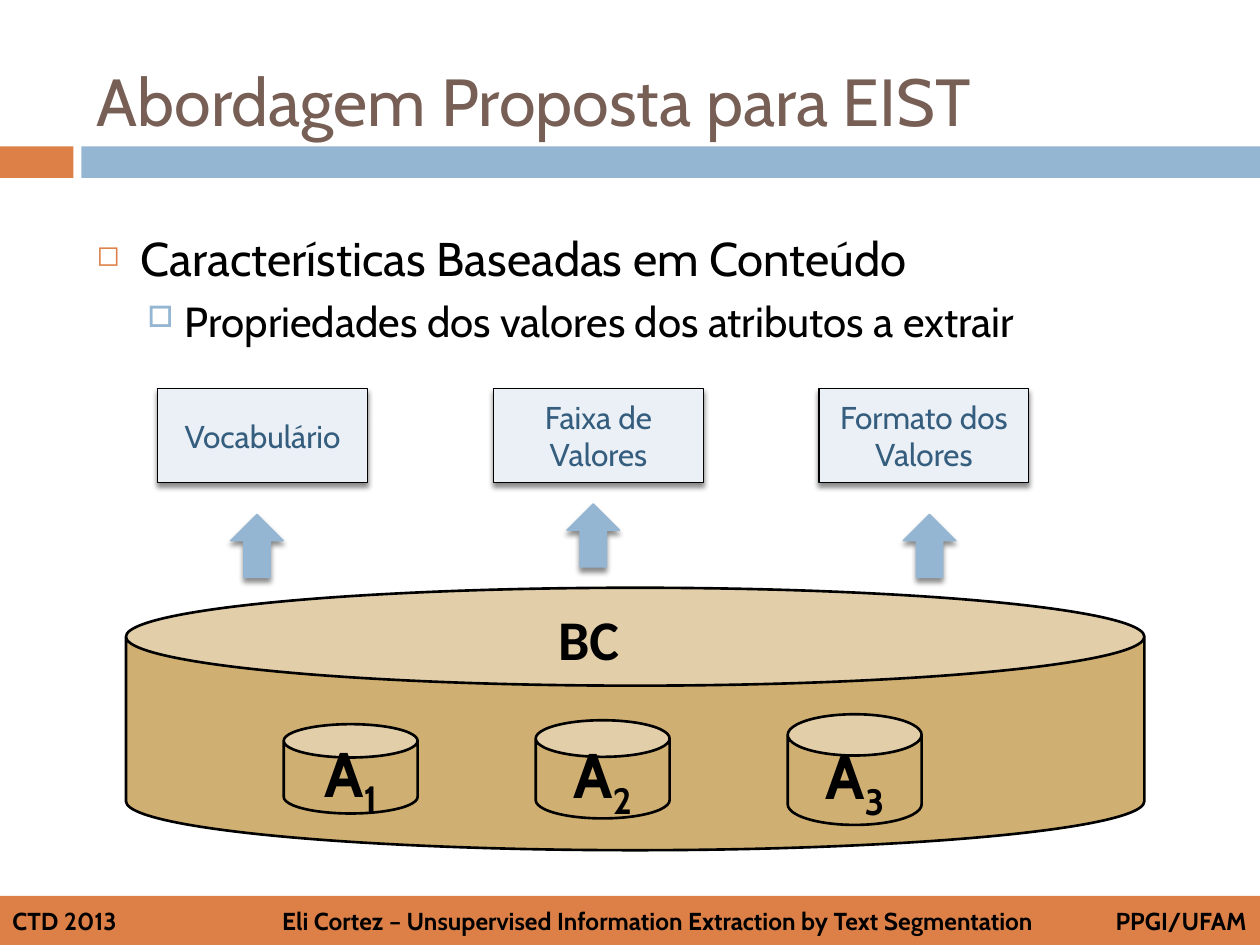
"""Build the slide on content-based features for information extraction."""
from lxml import etree
from pptx import Presentation
from pptx.dml.color import RGBColor
from pptx.enum.shapes import MSO_SHAPE
from pptx.enum.text import MSO_ANCHOR, PP_ALIGN
from pptx.oxml.ns import qn
from pptx.util import Cm, Pt

RECT, CAN, UP = MSO_SHAPE.RECTANGLE, MSO_SHAPE.CAN, MSO_SHAPE.UP_ARROW
TOP, MIDDLE = MSO_ANCHOR.TOP, MSO_ANCHOR.MIDDLE
LEFT, CENTER = PP_ALIGN.LEFT, PP_ALIGN.CENTER

ORANGE, BLUE, PALE, NAVY = "DD8047", "94B6D2", "EAF0F6", "355D7E"
SAND, BROWN, BLACK = "D0AF72", "775F55", "000000"

TITLE = "Abordagem Proposta para EIST"
FOOTER = ["CTD 2013",
          "Eli Cortez – Unsupervised Information Extraction by Text Segmentation",
          "PPGI/UFAM"]
FOOTER_TABS = [5.44, 22.24]
BULLETS = [
    ("Características Baseadas em Conteúdo", 27, 7, "◻", ORANGE, 60, 0.89, 0.89),
    ("Propriedades dos valores dos atributos a extrair", 24, 5.5, "□", BLUE, 70, 1.78, 0.76),
]
BASE = "BC"
FEATURES = [("Vocabulário", 3.18, 10.37), ("Faixa de Valores", 9.95, 10.16),
            ("Formato dos Valores", 16.51, 10.37)]
ATTRIBUTES = [("1", 14.6, 1.8), ("2", 14.52, 1.98), ("3", 14.4, 2.23)]
ARROW_X, ARROW_STEP = 4.65, 6.78
ATTR_X, ATTR_STEP = 5.72, 5.08


def rgb(color):
    return RGBColor.from_string(color)


def sub(parent, tag, **attrs):
    return etree.SubElement(parent, qn(tag), {k: str(v) for k, v in attrs.items()})


def add_shape(s, kind, box, fill, line=None, width=0.79):
    sp = s.shapes.add_shape(kind, *map(Cm, box))
    sp.shadow.inherit = False
    sp.fill.solid()
    sp.fill.fore_color.rgb = rgb(fill)
    if line:
        sp.line.color.rgb = rgb(line)
        sp.line.width = Pt(width)
    else:
        sp.line.fill.background()
    return sp


def add_can(s, box):
    sp = add_shape(s, CAN, box, SAND, BLACK, 1.5)
    sp.adjustments[0] = 0.373
    return sp


def add_shadow(sp):
    effects = sp._element.spPr.find(qn("a:effectLst"))
    shadow = sub(effects, "a:outerShdw", blurRad=Pt(3), dist=Pt(2.4),
                 dir=5400000, rotWithShape=0)
    color = sub(shadow, "a:srgbClr", val=BLACK)
    sub(color, "a:alpha", val=45000)


def set_frame(sp, anchor):
    tf = sp.text_frame
    tf.word_wrap = True
    tf.vertical_anchor = anchor
    return tf


def add_textbox(s, box, anchor=TOP):
    return set_frame(s.shapes.add_textbox(*map(Cm, box)), anchor)


def add_run(p, text, size, color=BLACK, bold=False, font="Cabin", align=LEFT):
    p.alignment = align
    r = p.add_run()
    r.text = text
    r.font.name, r.font.size, r.font.bold = font, Pt(size), bold
    r.font.color.rgb = rgb(color)
    return r


def add_bullet(p, char, color, percent, margin, hang):
    ppr = p._p.get_or_add_pPr()
    ppr.set("marL", str(Cm(margin)))
    ppr.set("indent", str(-Cm(hang)))
    sub(sub(ppr, "a:buClr"), "a:srgbClr", val=color)
    sub(ppr, "a:buSzPct", val=percent * 1000)
    sub(ppr, "a:buChar", char=char)


def add_footer(s):
    sp = add_shape(s, RECT, (0, 18.06, 25.43, 1.02), ORANGE)
    tf = set_frame(sp, MIDDLE)
    tf.margin_right = 0
    p = tf.paragraphs[0]
    add_run(p, "\t".join(FOOTER), 14, bold=True)
    tabs = sub(p._p.get_or_add_pPr(), "a:tabLst")
    for pos in FOOTER_TABS:
        sub(tabs, "a:tab", pos=Cm(pos), algn="l")


def add_body(s):
    tf = add_textbox(s, (1.7, 4.5, 22.66, 12.5))
    for i, (text, size, before, *bullet) in enumerate(BULLETS):
        p = tf.add_paragraph() if i else tf.paragraphs[0]
        add_run(p, text, size)
        p.space_before = Pt(before)
        add_bullet(p, *bullet)


def add_base(s):
    add_can(s, (2.54, 11.85, 20.53, 5.29))
    for i, (index, y, h) in enumerate(ATTRIBUTES):
        sp = add_can(s, (ATTR_X + i * ATTR_STEP, y, 2.7, h))
        p = set_frame(sp, MIDDLE).paragraphs[0]
        add_run(p, "A", 36, bold=True, align=CENTER)
        r = add_run(p, index, 36, bold=True, align=CENTER)
        r.font._element.set("baseline", "-25000")
    tf = add_textbox(s, (11, 12.07, 2.54, 1.62))
    add_run(tf.paragraphs[0], BASE, 32, bold=True, font="Calibri")


def add_features(s):
    for i, (text, x, arrow_y) in enumerate(FEATURES):
        sp = add_shape(s, RECT, (x, 7.83, 4.23, 1.9), PALE, BLACK)
        add_shadow(sp)
        p = set_frame(sp, MIDDLE).paragraphs[0]
        add_run(p, text, 18, NAVY, align=CENTER)
        arrow = (ARROW_X + i * ARROW_STEP, arrow_y, 1.06, 1.27)
        add_shadow(add_shape(s, UP, arrow, BLUE, BLUE))


def main():
    prs = Presentation()
    prs.slide_width, prs.slide_height = Cm(25.4), Cm(19.05)
    s = prs.slides.add_slide(prs.slide_layouts[6])
    add_shape(s, RECT, (0, 2.95, 1.48, 0.64), ORANGE)
    add_shape(s, RECT, (1.64, 2.95, 23.76, 0.64), BLUE)
    add_footer(s)
    add_body(s)
    add_base(s)
    add_features(s)
    tf = add_textbox(s, (1.7, 0.64, 22.66, 2.74), MIDDLE)
    add_run(tf.paragraphs[0], TITLE, 38, BROWN)
    prs.save("out.pptx")


if __name__ == "__main__":
    main()
